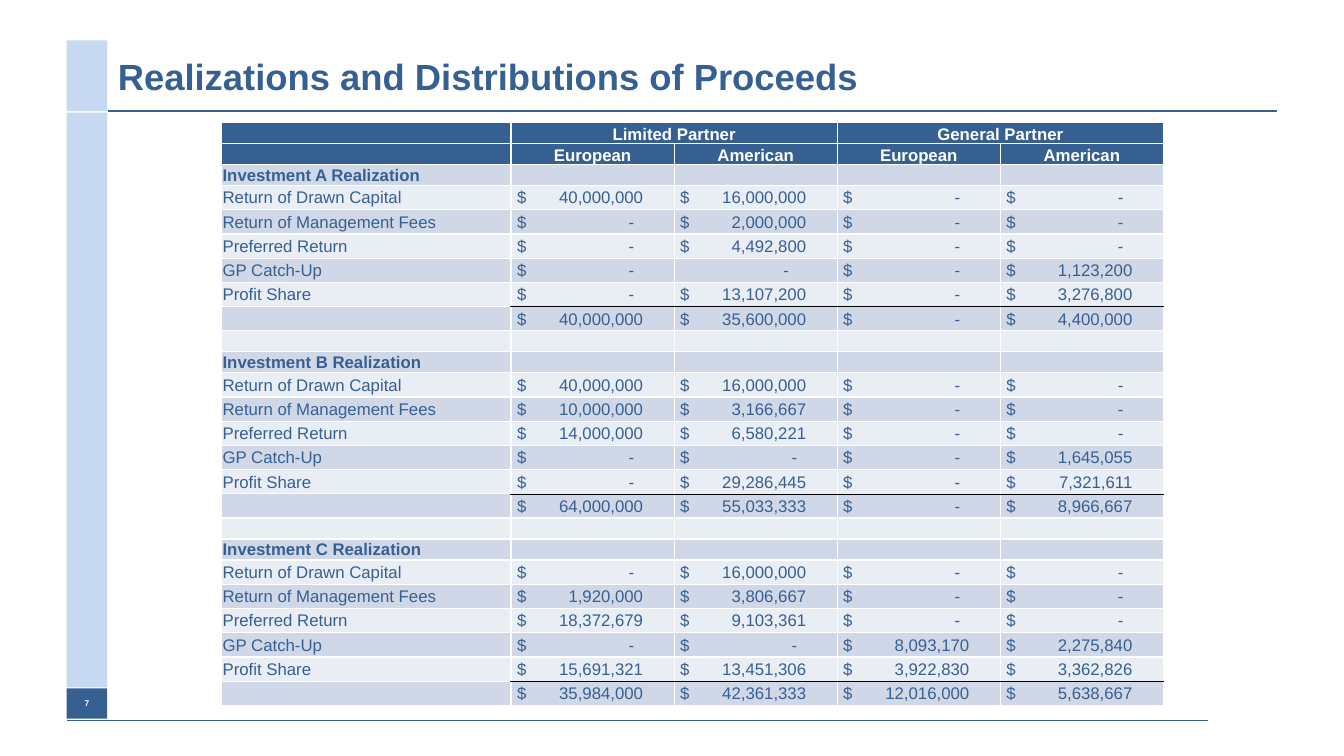
from lxml import etree
from pptx import Presentation
from pptx.dml.color import RGBColor
from pptx.enum.shapes import MSO_CONNECTOR, MSO_SHAPE
from pptx.enum.text import MSO_ANCHOR, PP_ALIGN
from pptx.oxml.ns import qn
from pptx.util import Cm, Pt

STRAIGHT, RECTANGLE = MSO_CONNECTOR.STRAIGHT, MSO_SHAPE.RECTANGLE
MIDDLE, BOTTOM = MSO_ANCHOR.MIDDLE, MSO_ANCHOR.BOTTOM
LEFT, CENTER = PP_ALIGN.LEFT, PP_ALIGN.CENTER

WHITE = RGBColor(0xFF, 0xFF, 0xFF)
BLACK = RGBColor(0x00, 0x00, 0x00)
BLUE = RGBColor(0x37, 0x60, 0x92)
TABLE_BLUE = RGBColor(0x36, 0x60, 0x92)
PALE_BLUE = RGBColor(0xC6, 0xD9, 0xF1)
DARK_BAND = RGBColor(0xD0, 0xD8, 0xE8)
LIGHT_BAND = RGBColor(0xE9, 0xED, 0xF4)

FONT = "Arial"
TABLE_SIZE = 12
LABEL_WIDTH, AMOUNT_WIDTH = Cm(7.29), Cm(4.11)
SHORT_ROW, TALL_ROW = Cm(0.49), Cm(0.61)
DIGITS_TAB, DASH_TAB, BARE_DASH_TAB = Cm(3.18), Cm(2.95), Cm(2.74)

HEADERS = [
    ["", "Limited Partner", "", "General Partner", ""],
    ["", "European", "American", "European", "American"],
]
STEPS = ["Return of Drawn Capital", "Return of Management Fees",
         "Preferred Return", "GP Catch-Up", "Profit Share", ""]
# One row per step, the last being the total; None is a dash without a dollar sign.
REALIZATIONS = {
    "Investment A Realization": [
        (40000000, 16000000, 0, 0),
        (0, 2000000, 0, 0),
        (0, 4492800, 0, 0),
        (0, None, 0, 1123200),
        (0, 13107200, 0, 3276800),
        (40000000, 35600000, 0, 4400000),
    ],
    "Investment B Realization": [
        (40000000, 16000000, 0, 0),
        (10000000, 3166667, 0, 0),
        (14000000, 6580221, 0, 0),
        (0, 0, 0, 1645055),
        (0, 29286445, 0, 7321611),
        (64000000, 55033333, 0, 8966667),
    ],
    "Investment C Realization": [
        (0, 16000000, 0, 0),
        (1920000, 3806667, 0, 0),
        (18372679, 9103361, 0, 0),
        (0, 0, 8093170, 2275840),
        (15691321, 13451306, 3922830, 3362826),
        (35984000, 42361333, 12016000, 5638667),
    ],
}


def add_run(paragraph, text, size, color, bold=False):
    run = paragraph.add_run()
    run.text = text
    run.font.name = FONT
    run.font.size = Pt(size)
    run.font.bold = bold
    run.font.color.rgb = color


def add_rule(slide, left, right, top, width):
    line = slide.shapes.add_connector(STRAIGHT, Cm(left), Cm(top), Cm(right), Cm(top))
    line.line.color.rgb = BLUE
    line.line.width = Pt(width)
    etree.SubElement(line._element.spPr, qn("a:effectLst"))


def add_side_block(slide, top, height, color):
    block = slide.shapes.add_shape(RECTANGLE, Cm(1.68), Cm(top), Cm(1.02), Cm(height))
    block.shadow.inherit = False
    block.fill.solid()
    block.fill.fore_color.rgb = color
    block.line.fill.background()
    return block


def add_title(slide, text):
    title = slide.shapes.add_textbox(Cm(2.72), Cm(1.02), Cm(29.41), Cm(1.78))
    frame = title.text_frame
    frame.word_wrap = True
    frame.vertical_anchor = MIDDLE
    add_run(frame.paragraphs[0], text, 26, BLUE, bold=True)


def add_page_number(slide, number):
    frame = add_side_block(slide, 17.35, 0.76, BLUE).text_frame
    frame.vertical_anchor = MIDDLE
    frame.paragraphs[0].alignment = CENTER
    add_run(frame.paragraphs[0], number, 6, WHITE, bold=True)


def set_border(cell, side, color, width):
    properties = cell._tc.get_or_add_tcPr()
    line = etree.SubElement(properties, qn(f"a:ln{side}"), w=str(Pt(width)))
    fill = etree.SubElement(line, qn("a:solidFill"))
    etree.SubElement(fill, qn("a:srgbClr"), val=str(color))


def style_cell(cell, fill, anchor=MIDDLE, ruled_side=None):
    """Set margins, white borders (black on ruled_side) and fill."""
    cell.margin_left = cell.margin_right = cell.margin_top = Cm(0.02)
    cell.margin_bottom = 0
    cell.vertical_anchor = anchor
    for side in "LRTB":
        if side == ruled_side:
            set_border(cell, side, BLACK, 0.5)
        else:
            set_border(cell, side, WHITE, 1)
    cell.fill.solid()
    cell.fill.fore_color.rgb = fill


def write_cell(cell, text, color=TABLE_BLUE, bold=False, alignment=LEFT):
    paragraph = cell.text_frame.paragraphs[0]
    paragraph.alignment = alignment
    if text:
        add_run(paragraph, text, TABLE_SIZE, color, bold)
    else:
        # Keeps an empty cell from growing its row
        etree.SubElement(paragraph._p, qn("a:endParaRPr"), sz=str(TABLE_SIZE * 100))


def write_amount(cell, amount):
    """Put the dollar sign at the left and the figure at a right tab."""
    cell.margin_left = Cm(0.15)
    sign = "" if amount is None else "$"
    figure = f"{amount:,}" if amount else "-"
    if amount is None:
        position = BARE_DASH_TAB
    else:
        position = DIGITS_TAB if amount else DASH_TAB
    properties = cell.text_frame.paragraphs[0]._p.get_or_add_pPr()
    tabs = etree.SubElement(properties, qn("a:tabLst"))
    etree.SubElement(tabs, qn("a:tab"), pos=str(position), algn="r")
    write_cell(cell, f"{sign}\t{figure}")


def body_rows():
    """List (label, amounts, ruled side) for each row below the headers."""
    rows = []
    for heading, amounts in REALIZATIONS.items():
        if rows:
            rows.append(("", None, None))
        rows.append((heading, None, None))
        sides = [None] * 4 + ["B", "T"]
        rows.extend(zip(STEPS, amounts, sides))
    return rows


def add_proceeds_table(slide):
    body = body_rows()
    row_count = len(HEADERS) + len(body)
    heights = [SHORT_ROW] * len(HEADERS) + [
        TALL_ROW if amounts else SHORT_ROW for _, amounts, _ in body]
    widths = [LABEL_WIDTH] + [AMOUNT_WIDTH] * 4
    table = slide.shapes.add_table(
        row_count, len(widths), Cm(5.59), Cm(3.09), sum(widths), sum(heights)).table
    table.first_row = table.horz_banding = False
    for column, width in zip(table.columns, widths):
        column.width = width
    for row, height in zip(table.rows, heights):
        row.height = height

    for row, texts in enumerate(HEADERS):
        for column, text in enumerate(texts):
            cell = table.cell(row, column)
            style_cell(cell, TABLE_BLUE, BOTTOM)
            write_cell(cell, text, WHITE, True, CENTER)
    for column in (1, 3):
        table.cell(0, column).merge(table.cell(0, column + 1))

    for row, (label, amounts, ruled_side) in enumerate(body, len(HEADERS)):
        band = LIGHT_BAND if row % 2 else DARK_BAND
        for column in range(len(widths)):
            cell = table.cell(row, column)
            style_cell(cell, band, ruled_side=ruled_side if column else None)
            if column == 0:
                write_cell(cell, label, bold=amounts is None)
            elif amounts:
                write_amount(cell, amounts[column - 1])
            else:
                write_cell(cell, "")


def main():
    presentation = Presentation()
    presentation.slide_width, presentation.slide_height = Cm(33.87), Cm(19.05)
    slide = presentation.slides.add_slide(presentation.slide_layouts[6])
    add_rule(slide, 1.68, 30.45, 18.16, 0.75)
    add_side_block(slide, 2.84, 14.48, PALE_BLUE)
    add_side_block(slide, 1.02, 1.78, PALE_BLUE)
    add_rule(slide, 2.72, 32.18, 2.8, 1)
    add_page_number(slide, "7")
    add_title(slide, "Realizations and Distributions of Proceeds")
    add_proceeds_table(slide)
    presentation.save("out.pptx")


if __name__ == "__main__":
    main()
